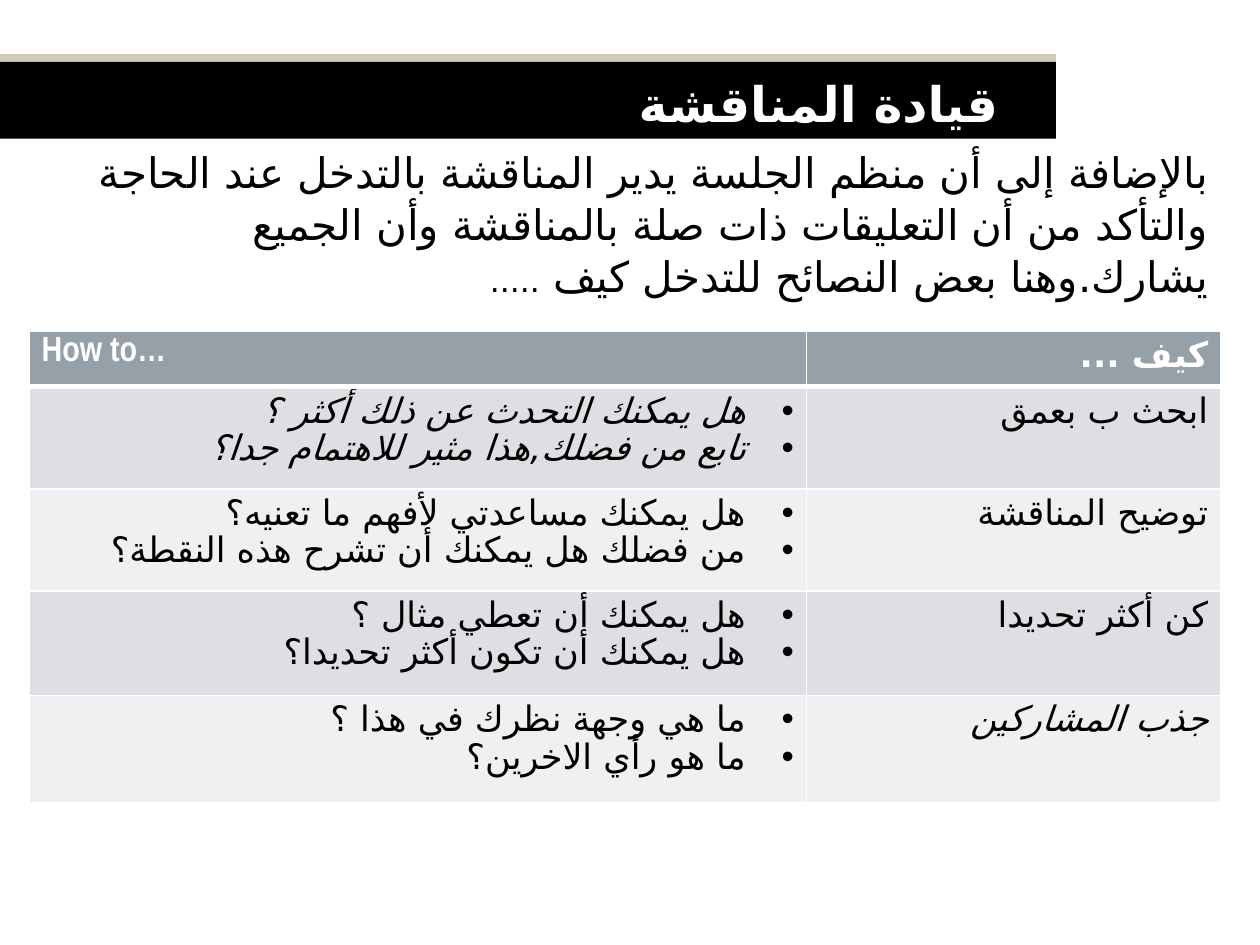
from lxml import etree
from pptx import Presentation
from pptx import util as u
from pptx.dml.color import RGBColor
from pptx.enum import shapes, text
from pptx.oxml.ns import qn

COLORS = {
    "accent": "D2CBB8",
    "black": "000000",
    "white": "FFFFFF",
    "header": "95A0A9",
    "odd_row": "DDDFE2",
    "even_row": "EFF0F1",
}
BODY_FONT = "Arial Narrow"
ARABIC_FONT = "DejaVu Sans"
COLUMN_WIDTHS = [6.17, 3.29]
ROW_HEIGHTS = [0.44, 0.81, 0.81, 0.83, 0.85]
HEADERS = ["How to…", "كيف ..."]
TIPS = [
    ("ابحث ب بعمق",
     ["هل يمكنك التحدث عن ذلك أكثر ؟", "تابع من فضلك,هذا مثير للاهتمام جدا؟"]),
    ("توضيح المناقشة",
     ["هل يمكنك مساعدتي لأفهم ما تعنيه؟", "من فضلك هل يمكنك أن تشرح هذه النقطة؟"]),
    ("كن أكثر تحديدا",
     ["هل يمكنك أن تعطي مثال ؟", "هل يمكنك أن تكون أكثر تحديدا؟"]),
    ("جذب المشاركين",
     ["ما هي وجهة نظرك في هذا ؟", "ما هو رأي الاخرين؟"]),
]


def color(name):
    return RGBColor.from_string(COLORS[name])


def style_span(span, size, color_name, font=BODY_FONT, bold=False, italic=False):
    span.font.size = u.Pt(size)
    span.font.name = font
    span.font.bold = bold
    span.font.italic = italic
    span.font.color.rgb = color(color_name)
    complex_font = etree.SubElement(span.font._element, qn("a:cs"))
    complex_font.set("typeface", ARABIC_FONT)


def set_right_to_left(para):
    para.alignment = text.PP_ALIGN.RIGHT
    para._p.get_or_add_pPr().set("rtl", "1")


def add_bullet(para):
    properties = para._p.get_or_add_pPr()
    properties.set("marL", str(u.Inches(0.38)))
    properties.set("indent", str(-u.Inches(0.38)))
    font = etree.SubElement(properties, qn("a:buFont"))
    font.set("typeface", "Arial")
    etree.SubElement(properties, qn("a:buChar")).set("char", "•")


def set_borders(cell, bottom_width):
    properties = cell._tc.get_or_add_tcPr()
    widths = {"a:lnL": 1, "a:lnR": 1, "a:lnT": 1, "a:lnB": bottom_width}
    for position, (tag, width) in enumerate(widths.items()):
        line = etree.Element(qn(tag))
        line.set("w", str(u.Pt(width)))
        fill = etree.SubElement(line, qn("a:solidFill"))
        etree.SubElement(fill, qn("a:srgbClr")).set("val", COLORS["white"])
        properties.insert(position, line)


def add_bar(page, top, height, color_name):
    bar = page.shapes.add_shape(
        shapes.MSO_SHAPE.RECTANGLE, 0, u.Inches(top), u.Inches(8.38), u.Inches(height))
    bar.shadow.inherit = False
    bar.fill.solid()
    bar.fill.fore_color.rgb = color(color_name)
    bar.line.fill.background()
    return bar


def add_title(page):
    frame = add_bar(page, 0.49, 0.61, "black").text_frame
    frame.text = "قيادة المناقشة"
    frame.vertical_anchor = text.MSO_ANCHOR.BOTTOM
    frame.margin_right = u.Inches(0.46)
    para = frame.paragraphs[0]
    set_right_to_left(para)
    style_span(para.runs[0], 28, "white", font="Calibri", bold=True)


def add_introduction(page):
    box = page.shapes.add_textbox(
        u.Inches(0.37), u.Inches(1.1), u.Inches(9.32), u.Inches(0.91))
    box.text_frame.word_wrap = True
    para = box.text_frame.paragraphs[0]
    para.text = ("بالإضافة إلى أن منظم الجلسة يدير المناقشة بالتدخل عند الحاجة "
                 "والتأكد من أن التعليقات ذات صلة بالمناقشة وأن الجميع يشارك."
                 "وهنا بعض النصائح للتدخل كيف ")
    para.add_run().text = "....."
    para.line_spacing = 1.03
    set_right_to_left(para)
    for span, size in zip(para.runs, [24, 18]):
        style_span(span, size, "black")


def fill_cell(cell, lines, fill, color_name="black", right_to_left=True,
              bullets=False, bold=False, italic=False, bottom_width=1):
    cell.fill.solid()
    cell.fill.fore_color.rgb = color(fill)
    set_borders(cell, bottom_width)
    cell.text_frame.text = "\n".join(lines)
    for para in cell.text_frame.paragraphs:
        para.line_spacing = 0.92
        if right_to_left:
            set_right_to_left(para)
        if bullets:
            add_bullet(para)
        style_span(para.runs[0], 20, color_name, bold=bold, italic=italic)


def add_tips_table(page):
    table = page.shapes.add_table(
        len(ROW_HEIGHTS), len(COLUMN_WIDTHS), u.Inches(0.23), u.Inches(2.63),
        u.Inches(sum(COLUMN_WIDTHS)), u.Inches(sum(ROW_HEIGHTS))).table
    for column, width in zip(table.columns, COLUMN_WIDTHS):
        column.width = u.Inches(width)
    for row, height in zip(table.rows, ROW_HEIGHTS):
        row.height = u.Inches(height)
    for index, heading in enumerate(HEADERS):
        fill_cell(table.cell(0, index), [heading], "header", "white",
                  right_to_left=index == 1, bold=True, bottom_width=3)
    for index, (topic, questions) in enumerate(TIPS, start=1):
        fill = "odd_row" if index % 2 else "even_row"
        fill_cell(table.cell(index, 0), questions, fill,
                  bullets=True, italic=index == 1)
        fill_cell(table.cell(index, 1), [topic], fill, italic=index == len(TIPS))


def main():
    deck = Presentation()
    deck.slide_width, deck.slide_height = u.Inches(10), u.Inches(7.5)
    page = deck.slides.add_slide(deck.slide_layouts[6])
    add_bar(page, 0.43, 0.07, "accent")
    add_title(page)
    add_introduction(page)
    add_tips_table(page)
    deck.save("out.pptx")


if __name__ == "__main__":
    main()
